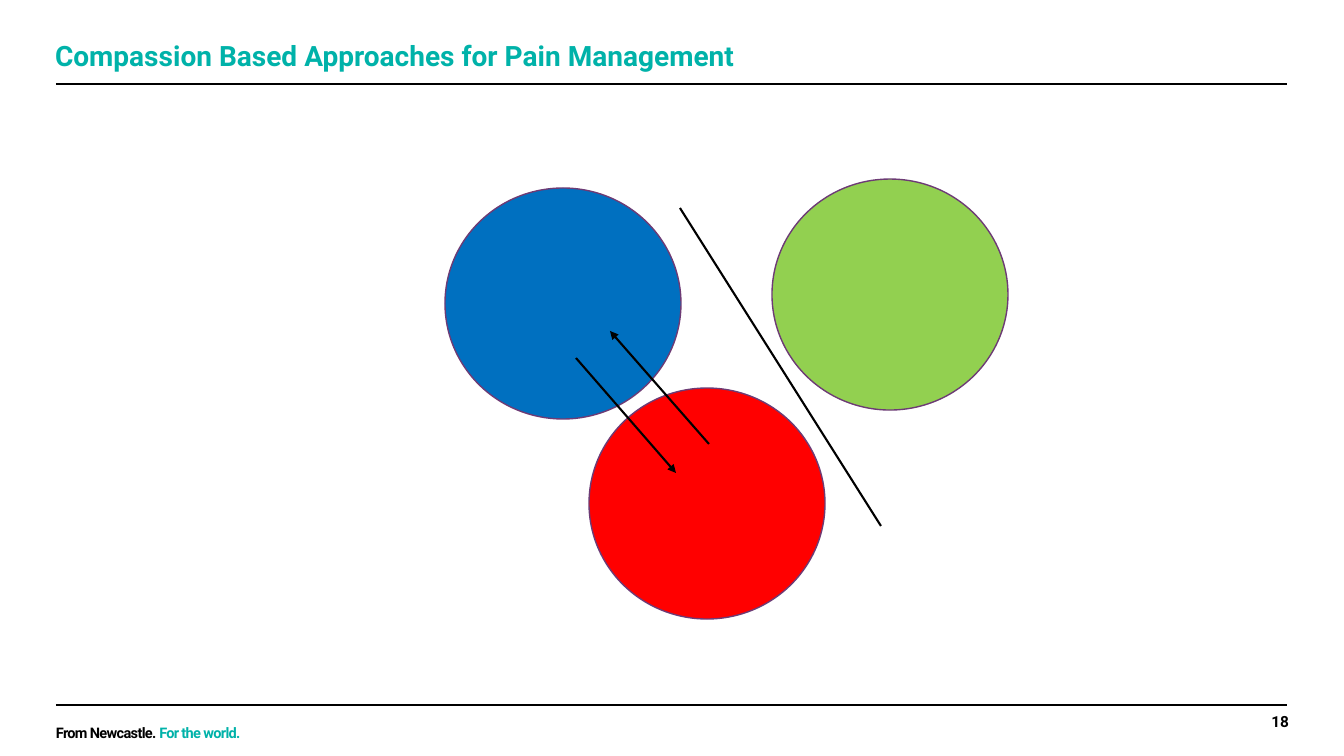
from lxml.etree import SubElement
from pptx import Presentation
from pptx.dml.color import RGBColor
from pptx.enum.shapes import MSO_CONNECTOR as Connector, MSO_SHAPE as Shape
from pptx.enum.text import PP_ALIGN as Align
from pptx.oxml.ns import qn
from pptx.util import Pt

PX = 914400 / 100.8
COLOURS = {
    "ink": "000000", "teal": "00B2A9", "outline": "6D3B75",
    "blue": "0070C0", "red": "FF0000", "green": "92D050",
}


def px(*lengths):
    return [round(length * PX) for length in lengths]


def colour(name):
    return RGBColor.from_string(COLOURS[name])


def add_text(page, box, spans, size, align=Align.LEFT, insets=(0, 0, 0, 0),
             line_spacing=None, baseline=None, tracking=None):
    """Write one bold paragraph made of (text, colour) spans."""
    frame = page.shapes.add_textbox(*px(*box)).text_frame
    frame.word_wrap = True
    (frame.margin_left, frame.margin_top,
     frame.margin_right, frame.margin_bottom) = px(*insets)
    para = frame.paragraphs[0]
    para.alignment = align
    para.line_spacing = line_spacing
    for text, ink in spans:
        span = para.add_run()
        span.text = text
        font = span.font
        font.name, font.size, font.bold = "Roboto", Pt(size), True
        font.color.rgb = colour(ink)
        properties = span._r.get_or_add_rPr()
        if baseline is not None:
            properties.set("baseline", str(baseline * 1000))
        if tracking is not None:
            properties.set("spc", str(round(tracking * 100)))


def add_line(page, start, end, width, arrow=False):
    line = page.shapes.add_connector(Connector.STRAIGHT, *px(*start, *end))
    line.line.color.rgb = colour("ink")
    line.line.width = Pt(width)
    if arrow:
        SubElement(line.line._get_or_add_ln(), qn("a:tailEnd"), type="triangle")
    SubElement(line._element.spPr, qn("a:effectLst"))


def add_header(page, left, top, width):
    add_text(page, (left - 1, top, 917, 34),
             [("Compassion Based Approaches for Pain Management", "teal")],
             20, insets=(0, 0, 0, 20), line_spacing=1.1)
    add_line(page, (left, top + 49), (left + width, top + 49), 1)


def add_footer(page, left, top, width):
    right = left + width
    add_line(page, (left, top), (right, top), 1)
    add_text(page, (left - 10, top + 11, 270, 30),
             [("From Newcastle. ", "ink"), ("For the world.", "teal")],
             18, insets=(10, 5, 10, 5), baseline=30, tracking=-0.5)
    add_text(page, (right - 69, top + 7, 71, 38), [("18", "ink")],
             11, align=Align.RIGHT)


def add_circles(page, left, top):
    """Three circles, two linked by arrows and one behind a divider."""
    for x, y, fill in [(0, 9, "blue"), (144, 209, "red"), (327, 0, "green")]:
        circle = page.shapes.add_shape(
            Shape.OVAL, *px(left + x, top + y, 236, 231))
        circle.shadow.inherit = False
        circle.fill.solid()
        circle.fill.fore_color.rgb = colour(fill)
        circle.line.color.rgb = colour("outline")
        circle.line.width = Pt(1)

    for x1, y1, x2, y2, arrow in [
        (264, 265, 165, 152, True),     # red to blue
        (131, 179, 231, 294, True),     # blue to red
        (235, 29, 436, 347, False),     # divider
    ]:
        add_line(page, (left + x1, top + y1), (left + x2, top + y2), 1.5, arrow)


def main():
    deck = Presentation()
    deck.slide_width, deck.slide_height = px(1344, 756)
    page = deck.slides.add_slide(deck.slide_layouts[6])
    add_header(page, 56, 35, 1231)
    add_footer(page, 56, 705, 1231)
    add_circles(page, 445, 179)
    deck.save("out.pptx")


if __name__ == "__main__":
    main()
